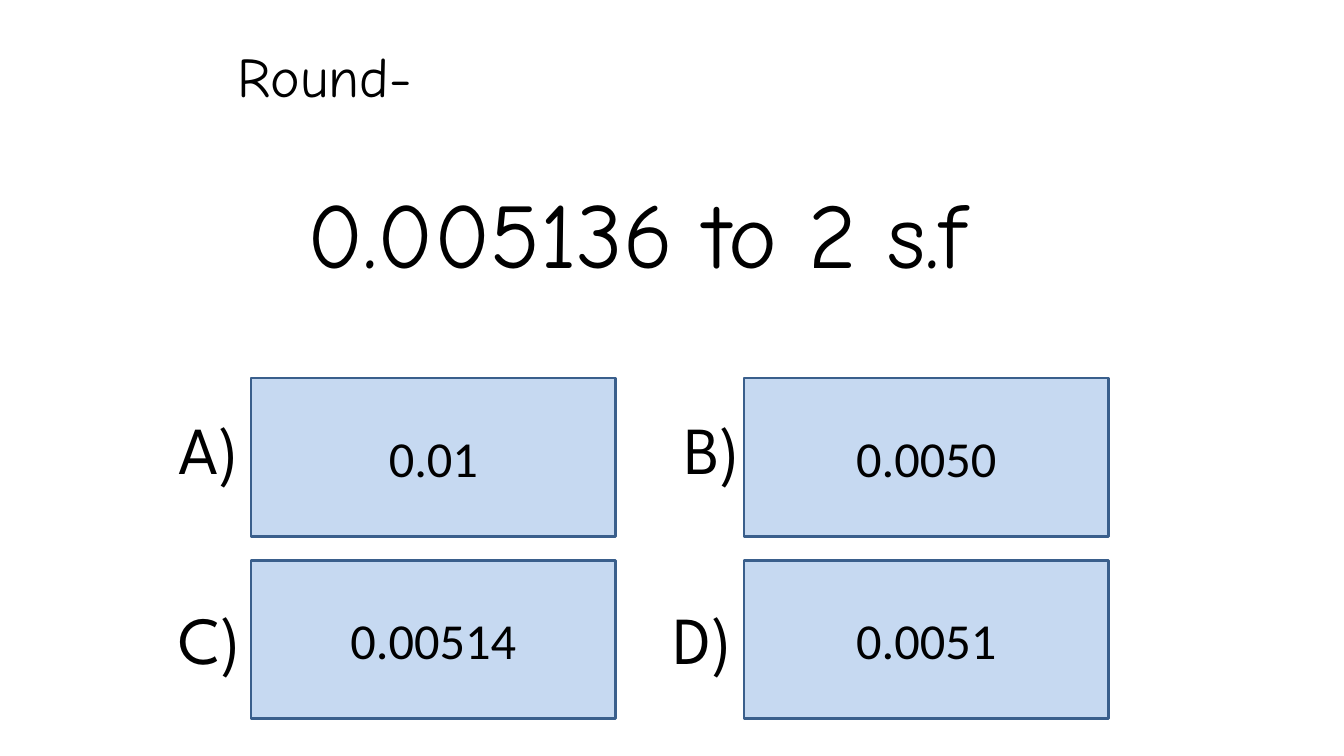
import pptx
import pptx.util
import pptx.dml.color
import pptx.enum.shapes
import pptx.enum.text

Pt = pptx.util.Pt
RGBColor = pptx.dml.color.RGBColor
PP_ALIGN = pptx.enum.text.PP_ALIGN
MSO_ANCHOR = pptx.enum.text.MSO_ANCHOR
MSO_AUTO_SIZE = pptx.enum.text.MSO_AUTO_SIZE

BLACK = RGBColor(0x00, 0x00, 0x00)
PALE_BLUE = RGBColor(0xC6, 0xD9, 0xF1)
DARK_BLUE = RGBColor(0x3A, 0x5F, 0x8C)

ANSWER_WIDTH, ANSWER_HEIGHT = 260.6, 113
COLUMN_LEFTS = (179.3, 531.4)
ANSWER_TOPS = (270, 400.3)
LETTER_TOPS = (287.3, 423.4)


def write(paragraph, text, align, **font_format):
    paragraph.alignment = align
    run = paragraph.add_run()
    run.text = text
    run.font.color.rgb = BLACK
    for name, value in font_format.items():
        setattr(run.font, name, value)


presentation = pptx.Presentation()
presentation.slide_width = Pt(960)
presentation.slide_height = Pt(540)
slide = presentation.slides.add_slide(presentation.slide_layouts[5])

question = slide.shapes.title
for name, value in {"left": 162.7, "top": 25.9, "width": 583.9, "height": 184.3}.items():
    setattr(question, name, Pt(value))
question_text = question.text_frame
for name, value in {
    "word_wrap": True,
    "auto_size": MSO_AUTO_SIZE.SHAPE_TO_FIT_TEXT,
    "vertical_anchor": MSO_ANCHOR.TOP,
}.items():
    setattr(question_text, name, value)
write(question_text.paragraphs[0], "Round-", PP_ALIGN.LEFT, name="Comic Neue", size=Pt(40))
rounding_task = question_text.add_paragraph()
rounding_task.space_before = Pt(48)
write(rounding_task, "0.005136 to 2 s.f", PP_ALIGN.CENTER, name="Comic Neue", size=Pt(66))

# Letter, its left edge and width, and the answer, row by row
choices = [
    ("A)", 120.2, 68.4, "0.01"),
    ("B)", 481.7, 60.5, "0.0050"),
    ("C)", 120.2, 72, "0.00514"),
    ("D)", 473.8, 68.4, "0.0051"),
]
for index, (letter, letter_left, letter_width, value) in enumerate(choices):
    row, column = divmod(index, 2)
    answer = slide.shapes.add_shape(
        pptx.enum.shapes.MSO_SHAPE.RECTANGLE,
        Pt(COLUMN_LEFTS[column]), Pt(ANSWER_TOPS[row]),
        Pt(ANSWER_WIDTH), Pt(ANSWER_HEIGHT),
    )
    answer.shadow.inherit = False
    answer.fill.solid()
    answer.fill.fore_color.rgb = PALE_BLUE
    answer.line.color.rgb = DARK_BLUE
    answer.line.width = Pt(2)
    answer.text_frame.vertical_anchor = MSO_ANCHOR.MIDDLE
    write(answer.text_frame.paragraphs[0], value, PP_ALIGN.CENTER, name="Calibri", size=Pt(36))

    label = slide.shapes.add_textbox(
        Pt(letter_left), Pt(LETTER_TOPS[row]), Pt(letter_width), Pt(65.5)
    )
    label.text_frame.word_wrap = False
    label.text_frame.auto_size = MSO_AUTO_SIZE.SHAPE_TO_FIT_TEXT
    write(label.text_frame.paragraphs[0], letter, PP_ALIGN.LEFT, name="League Spartan", size=Pt(48))

presentation.save("out.pptx")
